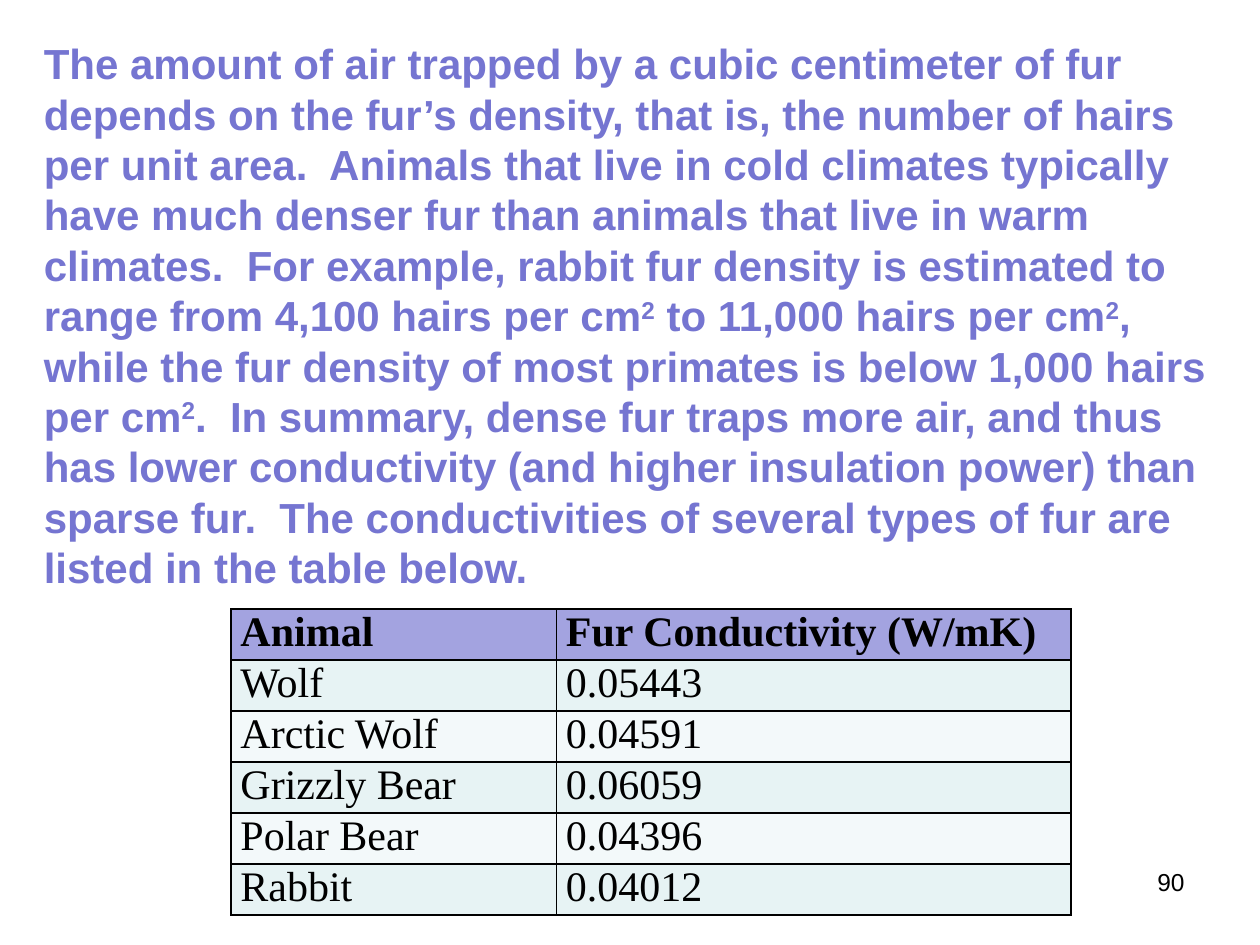
from typing import NamedTuple

from lxml.etree import SubElement
from pptx import Presentation
from pptx.dml.color import RGBColor
from pptx.enum.text import PP_ALIGN
from pptx.oxml.ns import qn
from pptx.util import Pt

BLACK = RGBColor(0x00, 0x00, 0x00)
VIOLET = RGBColor(0x75, 0x75, 0xD1)
HEADER_FILL = RGBColor(0xA3, 0xA3, 0xE0)
BAND_FILLS = (RGBColor(0xE7, 0xF3, 0xF4), RGBColor(0xF3, 0xF9, 0xFA))

BODY = (
    "The amount of air trapped by a cubic centimeter of fur depends on the fur’s "
    "density, that is, the number of hairs per unit area.  Animals that live in cold "
    "climates typically have much denser fur than animals that live in warm climates.  "
    "For example, rabbit fur density is estimated to range from 4,100 hairs per cm^2^ "
    "to 11,000 hairs per cm^2^, while the fur density of most primates is below 1,000 "
    "hairs per cm^2^.  In summary, dense fur traps more air, and thus has lower "
    "conductivity (and higher insulation power) than sparse fur.  The conductivities "
    "of several types of fur are listed in the table below."
)


class Box(NamedTuple):
    left: float
    top: float
    width: float
    height: float


class Fur(NamedTuple):
    animal: str
    conductivity: str


HEADER = Fur("Animal", "Fur Conductivity (W/mK)")
FURS = (
    Fur("Wolf", "0.05443"),
    Fur("Arctic Wolf", "0.04591"),
    Fur("Grizzly Bear", "0.06059"),
    Fur("Polar Bear", "0.04396"),
    Fur("Rabbit", "0.04012"),
)
COLUMN_WIDTHS = (186, 294)
ROW_HEIGHT = 29.16


def style(p, name: str, size: float, color: RGBColor, bold: bool = False) -> None:
    p.font.name = name
    p.font.size = Pt(size)
    p.font.color.rgb = color
    p.font.bold = bold


def add_text(s, box: Box, text: str, size: float, color: RGBColor,
             bold: bool = False, align: PP_ALIGN = PP_ALIGN.LEFT) -> None:
    """Add a text box; parts between carets become superscripts."""
    tf = s.shapes.add_textbox(*map(Pt, box)).text_frame
    tf.word_wrap = True
    p = tf.paragraphs[0]
    p.alignment = align
    style(p, "Arial", size, color, bold)
    for i, part in enumerate(text.split("^")):
        r = p.add_run()
        r.text = part
        if i % 2:
            r._r.get_or_add_rPr().set("baseline", "30000")


def add_borders(cell) -> None:
    tc_pr = cell._tc.get_or_add_tcPr()
    for side in ("a:lnL", "a:lnR", "a:lnT", "a:lnB"):
        ln = SubElement(tc_pr, qn(side), w=str(Pt(1)))
        fill = SubElement(ln, qn("a:solidFill"))
        SubElement(fill, qn("a:srgbClr"), val=str(BLACK))


def fill_cell(cell, text: str, fill: RGBColor, bold: bool) -> None:
    cell.margin_left = cell.margin_right = Pt(5.4)
    cell.margin_top = cell.margin_bottom = Pt(0)
    add_borders(cell)
    cell.fill.solid()
    cell.fill.fore_color.rgb = fill
    cell.text = text
    style(cell.text_frame.paragraphs[0], "Times New Roman", 24, BLACK, bold)


def add_fur_table(s, left: float, top: float) -> None:
    rows = (HEADER, *FURS)
    box = Box(left, top, sum(COLUMN_WIDTHS), ROW_HEIGHT * len(rows))
    table = s.shapes.add_table(len(rows), len(COLUMN_WIDTHS), *map(Pt, box)).table
    for column, width in zip(table.columns, COLUMN_WIDTHS):
        column.width = Pt(width)
    for i, fur in enumerate(rows):
        table.rows[i].height = Pt(ROW_HEIGHT)
        fill = BAND_FILLS[(i - 1) % 2] if i else HEADER_FILL
        for j, text in enumerate(fur):
            fill_cell(table.cell(i, j), text, fill, bold=i == 0)


def main() -> None:
    prs = Presentation()
    prs.slide_width, prs.slide_height = Pt(720), Pt(540)
    s = prs.slides.add_slide(prs.slide_layouts[6])
    add_text(s, Box(516, 492, 168, 37.5), "90", 14, BLACK, align=PP_ALIGN.RIGHT)
    add_text(s, Box(18, 18, 684, 327), BODY, 24, VIOLET, bold=True)
    add_fur_table(s, 132, 348)
    prs.save("out.pptx")


if __name__ == "__main__":
    main()
